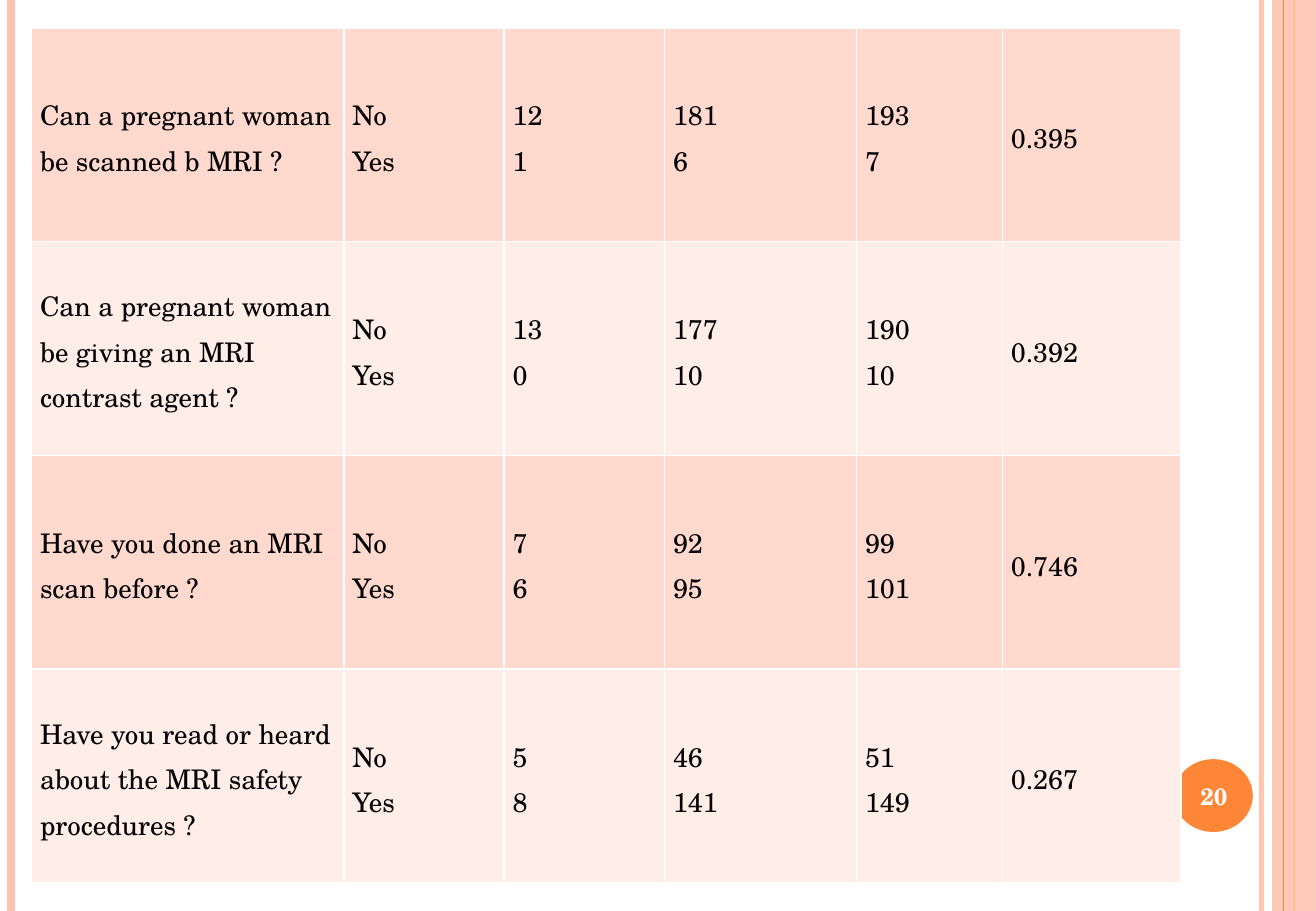
from typing import NamedTuple

from lxml.etree import SubElement
from pptx import Presentation
from pptx.dml.color import RGBColor
from pptx.enum.shapes import MSO_CONNECTOR, MSO_SHAPE
from pptx.enum.text import MSO_ANCHOR, PP_ALIGN
from pptx.oxml import parse_xml
from pptx.oxml.ns import nsdecls, qn
from pptx.slide import Slide
from pptx.table import _Cell
from pptx.text.text import TextFrame
from pptx.util import Inches, Pt

FONT = "TeX Gyre Schola"
COLORS = {
    "peach": "FEC3AE",
    "orange": "FE8637",
    "dark row": "FFD9CE",
    "light row": "FFEDE8",
    "white": "FFFFFF",
    "black": "000000",
}
PAGE_WIDTH, PAGE_HEIGHT = 10.83, 7.5
COLUMN_WIDTHS = (2.57, 1.32, 1.32, 1.58, 1.2, 1.47)
ROW_HEIGHT = 1.76


class Stripe(NamedTuple):
    x: float
    color: str
    width: float
    opacity: int = 100


class Question(NamedTuple):
    wording: str
    first_group: str
    second_group: str
    total: str
    p_value: str


BACK_STRIPES = (
    Stripe(10.38, "peach", 3, 93),
    Stripe(0.09, "peach", 4.5),
    Stripe(10.65, "orange", 1.5),
)
FRONT_STRIPE = Stripe(10.56, "orange", 0.75)

QUESTIONS = (
    Question("Can a pregnant woman be scanned b MRI ?", "12\n1", "181\n6", "193\n7", "0.395"),
    Question("Can a pregnant woman be giving an MRI contrast agent ?",
             "13\n0", "177\n10", "190\n10", "0.392"),
    Question("Have you done an MRI scan before ?", "7\n6", "92\n95", "99\n101", "0.746"),
    Question("Have you read or heard about the MRI safety procedures ?",
             "5\n8", "46\n141", "51\n149", "0.267"),
)


def rgb(name: str) -> RGBColor:
    return RGBColor.from_string(COLORS[name])


def set_opacity(properties, percent: int) -> None:
    """Make the first solid colour found below the properties translucent."""
    color = next(properties.iter(qn("a:srgbClr")))
    SubElement(color, qn("a:alpha")).set("val", str(percent * 1000))


def add_stripe(page: Slide, stripe: Stripe) -> None:
    line = page.shapes.add_connector(
        MSO_CONNECTOR.STRAIGHT,
        Inches(stripe.x), 0, Inches(stripe.x), Inches(PAGE_HEIGHT))
    line.line.color.rgb = rgb(stripe.color)
    line.line.width = Pt(stripe.width)
    properties = line._element.spPr
    if stripe.opacity < 100:
        set_opacity(properties, stripe.opacity)
    SubElement(properties, qn("a:effectLst"))


def add_plain_shape(page: Slide, kind: MSO_SHAPE, left: float, top: float,
                    width: float, height: float, color: str):
    shape = page.shapes.add_shape(
        kind, Inches(left), Inches(top), Inches(width), Inches(height))
    shape.shadow.inherit = False
    shape.fill.solid()
    shape.fill.fore_color.rgb = rgb(color)
    shape.line.fill.background()
    return shape


def format_text(frame: TextFrame, size: float, color: str, alignment: PP_ALIGN,
                spacing: float = 1.0, bold: bool = False) -> None:
    frame.word_wrap = True
    for paragraph in frame.paragraphs:
        paragraph.alignment = alignment
        paragraph.line_spacing = spacing
        for span in paragraph.runs:
            span.font.name = FONT
            span.font.size = Pt(size)
            span.font.bold = bold
            span.font.color.rgb = rgb(color)


def add_page_number(page: Slide, number: str) -> None:
    add_plain_shape(page, MSO_SHAPE.OVAL, 9.66, 6.25, 0.65, 0.6, "orange")
    box = page.shapes.add_textbox(Inches(9.63), Inches(6.27), Inches(0.72), Inches(0.57))
    box.text_frame.text = number
    box.text_frame.vertical_anchor = MSO_ANCHOR.MIDDLE
    format_text(box.text_frame, 14, "white", PP_ALIGN.CENTER, bold=True)


def add_borders(cell: _Cell) -> None:
    properties = cell._tc.get_or_add_tcPr()
    for position, side in enumerate(("lnL", "lnR", "lnT", "lnB")):
        properties.insert(position, parse_xml(
            f'<a:{side} {nsdecls("a")} w="{Pt(1)}"><a:solidFill>'
            f'<a:srgbClr val="{COLORS["white"]}"/></a:solidFill></a:{side}>'))


def fill_cell(cell: _Cell, text: str, color: str) -> None:
    cell.text_frame.text = text
    cell.vertical_anchor = MSO_ANCHOR.MIDDLE
    cell.margin_left = cell.margin_right = Inches(0.07)
    cell.margin_top = cell.margin_bottom = 0
    cell.fill.solid()
    cell.fill.fore_color.rgb = rgb(color)
    add_borders(cell)
    format_text(cell.text_frame, 16, "black", PP_ALIGN.LEFT, spacing=1.15)


def add_question_table(page: Slide) -> None:
    table = page.shapes.add_table(
        len(QUESTIONS), len(COLUMN_WIDTHS), Inches(0.26), Inches(0.23),
        Inches(sum(COLUMN_WIDTHS)), Inches(ROW_HEIGHT * len(QUESTIONS))).table
    table.first_row = False
    for column, width in zip(table.columns, COLUMN_WIDTHS):
        column.width = Inches(width)
    for index, (row, question) in enumerate(zip(table.rows, QUESTIONS)):
        row.height = Inches(ROW_HEIGHT)
        color = "light row" if index % 2 else "dark row"
        wording, *results = question
        for cell, text in zip(row.cells, (wording, "No\nYes", *results)):
            fill_cell(cell, text, color)


def main() -> None:
    deck = Presentation()
    deck.slide_width, deck.slide_height = Inches(PAGE_WIDTH), Inches(PAGE_HEIGHT)
    page = deck.slides.add_slide(deck.slide_layouts[6])
    for stripe in BACK_STRIPES:
        add_stripe(page, stripe)
    band = add_plain_shape(page, MSO_SHAPE.RECTANGLE, 10.47, 0, 0.36, PAGE_HEIGHT, "peach")
    set_opacity(band._element.spPr, 87)
    add_stripe(page, FRONT_STRIPE)
    add_page_number(page, "20")
    add_question_table(page)
    deck.save("out.pptx")


if __name__ == "__main__":
    main()
